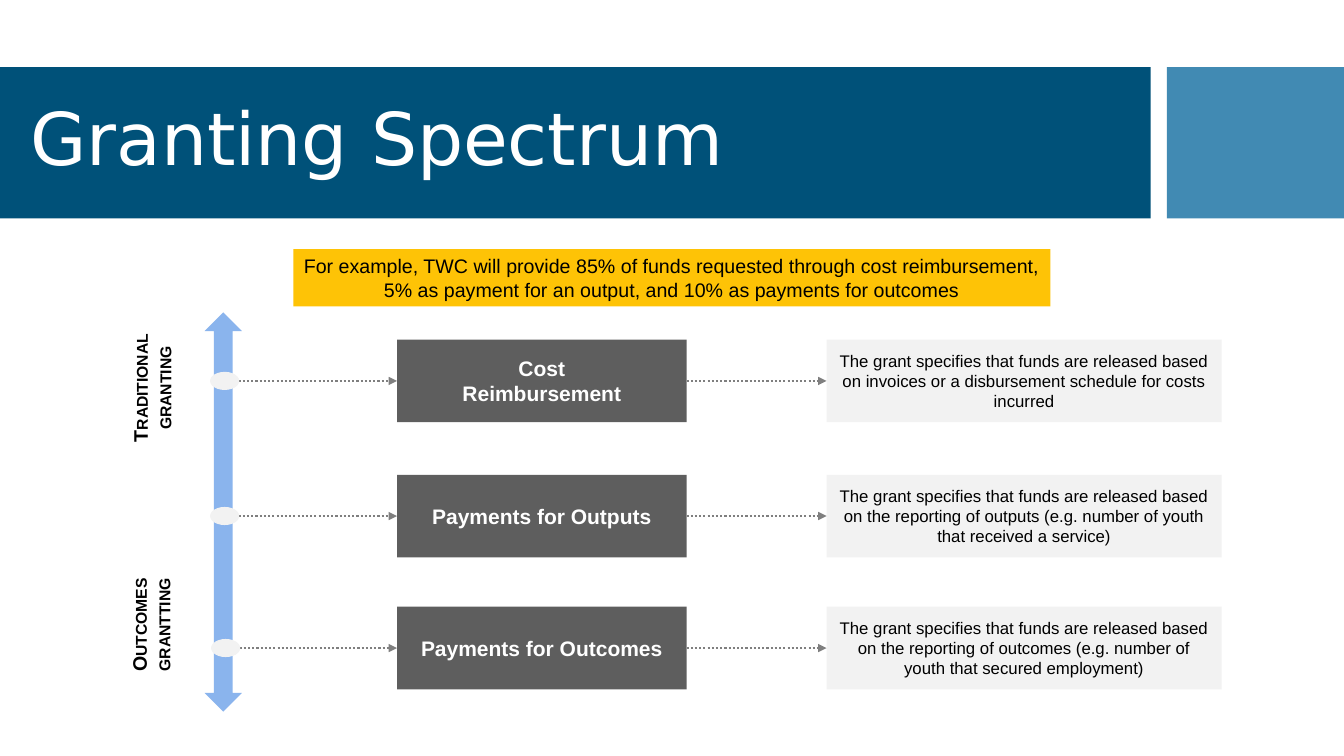
from lxml.etree import SubElement
from pptx import Presentation
from pptx.dml.color import RGBColor
from pptx.enum.dml import MSO_LINE
from pptx.enum.shapes import MSO_CONNECTOR, MSO_SHAPE
from pptx.enum.text import MSO_ANCHOR, MSO_AUTO_SIZE, PP_ALIGN
from pptx.oxml.ns import qn
from pptx.util import Pt

TITLE = "Granting Spectrum"
BANNER = ("For example, TWC will provide 85% of funds requested through cost reimbursement, "
          "5% as payment for an output, and 10% as payments for outcomes")
# top, dot left, method lines, description
ROWS = [
    (242.6, 150.5, ["Cost", "Reimbursement"],
     "The grant specifies that funds are released based on invoices or a disbursement "
     "schedule for costs incurred"),
    (339.1, 150.5, ["Payments for Outputs"],
     "The grant specifies that funds are released based on the reporting of outputs "
     "(e.g. number of youth that received a service)"),
    (433.4, 151.2, ["Payments for Outcomes"],
     "The grant specifies that funds are released based on the reporting of outcomes "
     "(e.g. number of youth that secured employment)"),
]
# left, top, lines
AXIS_LABELS = [
    (62.6, 249.8, ["Traditional", "granting"]),
    (61.9, 419, ["Outcomes", "grantting"]),
]
ROW_H = 59
METHOD_X, METHOD_W = 283.6, 206.8
DETAIL_X, DETAIL_W = 590.4, 282.2
DOT_W, DOT_H = 20, 12.2


def color(value):
    return RGBColor.from_string(value)


def block(kind, x, y, w, h, fill, line=None):
    sp = s.shapes.add_shape(kind, Pt(x), Pt(y), Pt(w), Pt(h))
    sp.shadow.inherit = False
    sp.fill.solid()
    sp.fill.fore_color.rgb = color(fill)
    if line:
        sp.line.color.rgb = color(line)
        sp.line.width = Pt(0.75)
    else:
        sp.line.fill.background()
    return sp


def write(sp, lines, size, ink="000000", bold=False, anchor=MSO_ANCHOR.MIDDLE,
          align=PP_ALIGN.CENTER, font="Arial", small_caps=False):
    tf = sp.text_frame
    tf.word_wrap = True
    tf.auto_size = MSO_AUTO_SIZE.NONE
    tf.vertical_anchor = anchor
    for i, line in enumerate(lines):
        p = tf.add_paragraph() if i else tf.paragraphs[0]
        p.alignment = align
        r = p.add_run()
        r.text = line
        r.font.name = font
        r.font.size = Pt(size)
        r.font.bold = bold
        r.font.color.rgb = color(ink)
        if small_caps:
            r._r.get_or_add_rPr().set("cap", "small")


def dotted_arrow(x1, x2, y):
    c = s.shapes.add_connector(MSO_CONNECTOR.STRAIGHT, Pt(x1), Pt(y), Pt(x2), Pt(y))
    c.line.color.rgb = color("7F7F7F")
    c.line.width = Pt(1.5)
    c.line.dash_style = MSO_LINE.ROUND_DOT
    SubElement(c.line._get_or_add_ln(), qn("a:tailEnd"), type="triangle")
    SubElement(c._element.spPr, qn("a:effectLst"))


prs = Presentation()
prs.slide_width, prs.slide_height = Pt(960), Pt(540)
s = prs.slides.add_slide(prs.slide_layouts[5])

title = s.shapes.title
title.left, title.top, title.width, title.height = Pt(14.4), Pt(59), Pt(796.3), Pt(85)
write(title, [TITLE], 52, "FFFFFF", align=PP_ALIGN.LEFT, font="DejaVu Sans")
title.text_frame.paragraphs[0].line_spacing = 0.9
bands = [block(MSO_SHAPE.RECTANGLE, 0, 48, 822, 108, "005179"),
         block(MSO_SHAPE.RECTANGLE, 833.5, 48, 126.5, 108, "418AB3")]
for band in bands:
    title._element.addprevious(band._element)

block(MSO_SHAPE.UP_DOWN_ARROW, 146.2, 223.2, 26.6, 285.1, "8AB4ED")

for top, dot_x, method, detail in ROWS:
    mid = top + ROW_H / 2
    box = block(MSO_SHAPE.RECTANGLE, METHOD_X, top, METHOD_W, ROW_H, "5E5E5E")
    write(box, method, 15, "FFFFFF", bold=True)
    box = block(MSO_SHAPE.RECTANGLE, DETAIL_X, top, DETAIL_W, ROW_H, "F2F2F2")
    write(box, [detail], 12)
    dotted_arrow(dot_x + DOT_W, METHOD_X, mid)
    dotted_arrow(METHOD_X + METHOD_W, DETAIL_X, mid)
    block(MSO_SHAPE.OVAL, dot_x, mid - DOT_H / 2, DOT_W, DOT_H, "F2F2F2", "F2F2F2")

for x, y, lines in AXIS_LABELS:
    label = s.shapes.add_textbox(Pt(x), Pt(y), Pt(105.8), Pt(54.7))
    label.rotation = 270
    write(label, lines, 14, bold=True, anchor=MSO_ANCHOR.TOP, small_caps=True)

banner = block(MSO_SHAPE.RECTANGLE, 209.5, 178, 540.7, 41, "FEC306")
write(banner, [BANNER], 14, anchor=MSO_ANCHOR.TOP)

prs.save("out.pptx")
